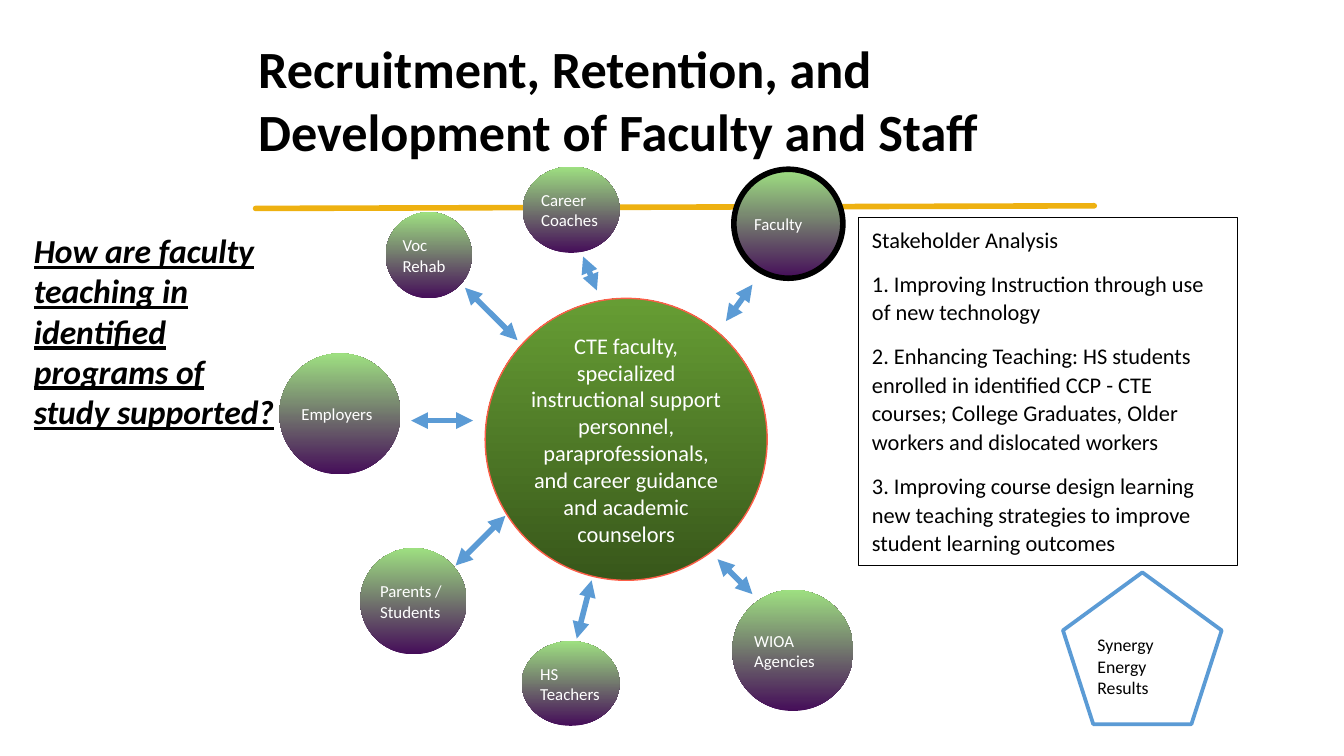
"""Build the faculty recruitment slide: stakeholders around a central hub."""
from lxml import etree
from pptx import Presentation
from pptx.dml.color import RGBColor
from pptx.enum.shapes import MSO_CONNECTOR as Link, MSO_SHAPE as Preset
from pptx.enum.text import MSO_ANCHOR as Anchor, PP_ALIGN as Align
from pptx.oxml.ns import qn
from pptx.util import Cm, Pt

TITLE = "Recruitment, Retention, and Development of Faculty and Staff"
QUESTION = "How are faculty teaching in identified programs of study supported?"
HUB = ("CTE faculty, specialized instructional support personnel, paraprofessionals, "
       "and career guidance and academic counselors")
ANALYSIS = [
    "Stakeholder Analysis",
    "1. Improving Instruction through use of new technology",
    "2. Enhancing Teaching: HS students enrolled in identified CCP - CTE courses; "
    "College Graduates, Older workers and dislocated workers",
    "3. Improving course design learning new teaching strategies to improve "
    "student learning outcomes",
]
OUTCOMES = ["Synergy", "Energy", "Results"]
STAKEHOLDERS = [
    ("Career Coaches", (9.88, 3.15, 1.83, 1.63), (11.28, 5.49, 11.02, 4.85)),
    ("Voc Rehab", (7.29, 4.01, 1.63, 1.63), (9.78, 6.43, 8.79, 5.44)),
    ("Employers", (5.28, 6.68, 2.29, 2.29), (7.77, 7.95, 8.94, 7.95)),
    ("Parents /Students", (6.81, 10.36, 2.01, 2.01), (8.61, 10.69, 9.55, 9.75)),
    ("HS Teachers", (9.86, 12.12, 1.85, 1.6), (10.9, 12.07, 11.18, 10.97)),
    ("WIOA Agencies", (13.84, 11.15, 2.29, 2.29), (13.56, 10.57, 14.22, 11.23)),
    ("Faculty", (13.87, 3.2, 2.06, 2.06), (13.72, 6.07, 14.22, 5.38)),
]
HIGHLIGHTED = "Faculty"
PURPLE_GREEN = ("450D59", "9EE081")
DARK_GREEN = ("38571A", "669D34")
BLACK, WHITE, BLUE, GOLD, RED = "000000", "FFFFFF", "5B9BD5", "EEB111", "FD5E48"


def rgb(value):
    return RGBColor.from_string(value)


def write(holder, paragraphs, size, color=BLACK, bold=False, italic=False, underline=False,
          align=Align.LEFT, anchor=Anchor.TOP, inset=(0.08, 0.08), spacing=None, after=None):
    frame = holder.text_frame
    frame.word_wrap = True
    frame.vertical_anchor = anchor
    frame.margin_left = frame.margin_right = Cm(inset[0])
    frame.margin_top = frame.margin_bottom = Cm(inset[1])
    for index, text in enumerate(paragraphs):
        paragraph = frame.add_paragraph() if index else frame.paragraphs[0]
        paragraph.alignment = align
        if spacing:
            paragraph.line_spacing = spacing
        if after:
            paragraph.space_after = Pt(after)
        run = paragraph.add_run()
        run.text = text
        font = run.font
        font.name, font.size, font.color.rgb = "Calibri", Pt(size), rgb(color)
        font.bold, font.italic, font.underline = bold, italic, underline


def add_figure(slide, preset, box, fill=None, gradient=None, line=None, width=0.75):
    figure = slide.shapes.add_shape(preset, *map(Cm, box))
    figure.shadow.inherit = False
    if gradient:
        figure.fill.gradient()
        figure.fill.gradient_angle = 90
        for stop, color in zip(figure.fill.gradient_stops, gradient):
            stop.color.rgb = rgb(color)
    elif fill:
        figure.fill.solid()
        figure.fill.fore_color.rgb = rgb(fill)
    else:
        figure.fill.background()
    if line:
        figure.line.color.rgb = rgb(line)
        figure.line.width = Pt(width)
    else:
        figure.line.fill.background()
    return figure


def add_line(slide, ends, color, arrows=False):
    line = slide.shapes.add_connector(Link.STRAIGHT, *map(Cm, ends))
    line.line.color.rgb = rgb(color)
    line.line.width = Pt(3)
    outline = line.line._get_or_add_ln()
    if arrows:
        for end in ("a:headEnd", "a:tailEnd"):
            etree.SubElement(outline, qn(end), type="triangle")
    else:
        outline.set("cap", "rnd")
    etree.SubElement(line._element.spPr, qn("a:effectLst"))


def main():
    deck = Presentation()
    deck.slide_width, deck.slide_height = Cm(25.4), Cm(14.29)
    slide = deck.slides.add_slide(deck.slide_layouts[6])

    add_line(slide, (4.83, 3.94, 20.68, 3.89), GOLD)
    title = slide.shapes.add_textbox(*map(Cm, (4.8, 0.61, 15.9, 2.29)))
    write(title, [TITLE], 28, bold=True)
    question = slide.shapes.add_textbox(*map(Cm, (0.56, 4.27, 4.8, 4.06)))
    write(question, [QUESTION], 18, bold=True, italic=True, underline=True)

    hub = add_figure(slide, Preset.OVAL, (9.17, 5.64, 5.33, 5.33), gradient=DARK_GREEN, line=RED)
    write(hub, [HUB], 12, WHITE, align=Align.CENTER, anchor=Anchor.MIDDLE)
    for name, box, ends in STAKEHOLDERS:
        rim = BLACK if name == HIGHLIGHTED else None
        circle = add_figure(slide, Preset.OVAL, box, gradient=PURPLE_GREEN, line=rim, width=3)
        write(circle, [name], 9, WHITE, anchor=Anchor.MIDDLE)
        add_line(slide, ends, BLUE, arrows=True)

    analysis = add_figure(slide, Preset.RECTANGLE, (16.23, 4.11, 7.16, 6.58), line=BLACK)
    write(analysis, ANALYSIS, 12, inset=(0.25, 0.13), spacing=1.07, after=8)
    outcomes = add_figure(slide, Preset.REGULAR_PENTAGON, (20.09, 10.82, 3, 2.87),
                          fill=WHITE, line=BLUE, width=2)
    write(outcomes, OUTCOMES, 9.5, anchor=Anchor.MIDDLE)

    deck.save("out.pptx")


if __name__ == "__main__":
    main()
